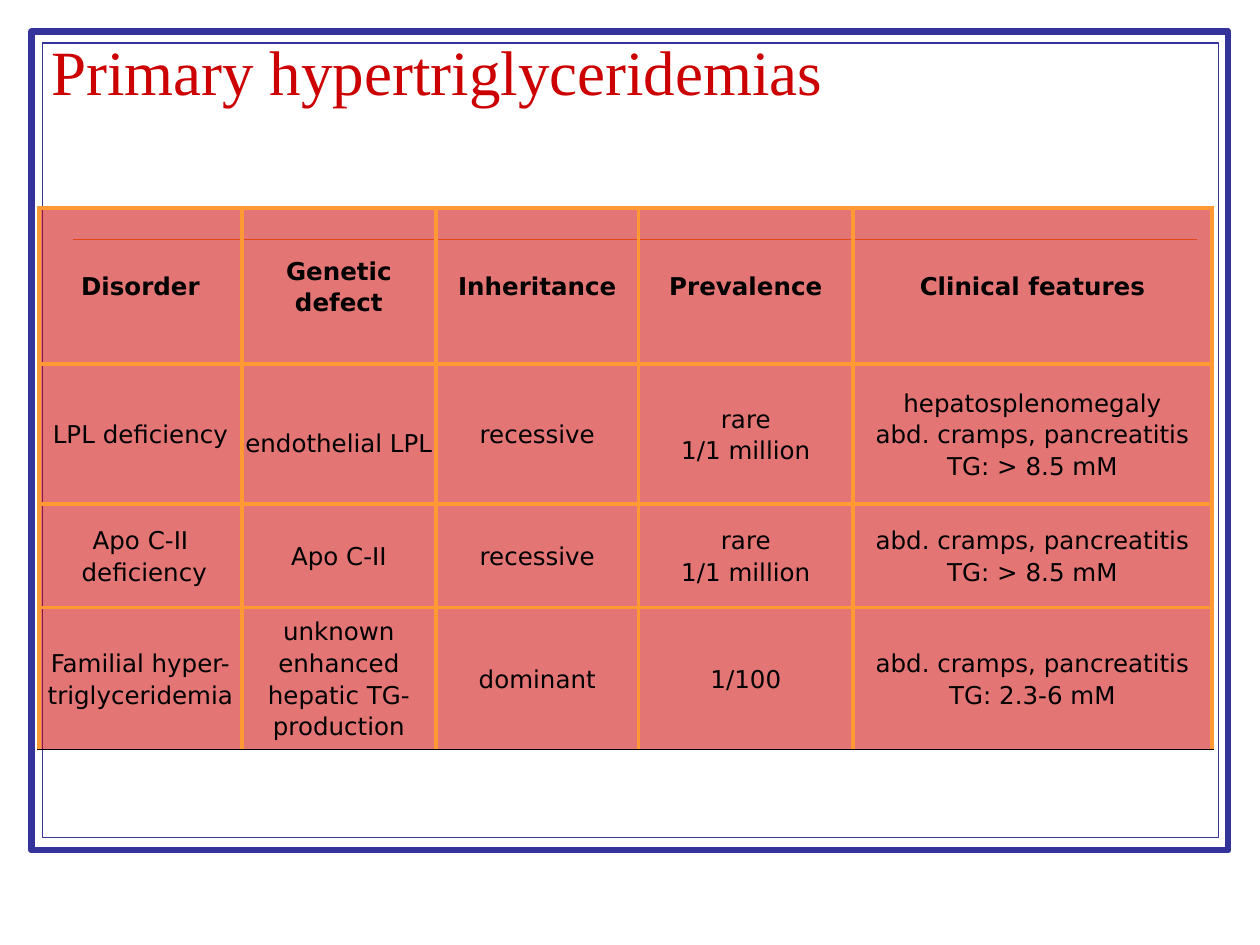
from copy import deepcopy

from lxml import etree
from pptx import Presentation
from pptx import util as u
from pptx.dml.color import RGBColor
from pptx.enum import shapes, text
from pptx.oxml.ns import qn

NAVY, ORANGE, RED, WHITE, BLACK = "333399", "FF9933", "CC0000", "FFFFFF", "000000"

COLUMN_WIDTHS = [1.61, 1.54, 1.61, 1.7, 2.85]
ROW_HEIGHTS = [1.24, 1.11, 0.82, 0.98]
DISORDERS = [
    ["Disorder", "Genetic defect", "Inheritance", "Prevalence", "Clinical features"],
    ["LPL deficiency", "endothelial LPL", "recessive", "rare\n1/1 million",
     "hepatosplenomegaly\nabd. cramps, pancreatitis\nTG: > 8.5 mM"],
    ["Apo C-II\n deficiency", "Apo C-II", "recessive", "rare\n1/1 million",
     "abd. cramps, pancreatitis\nTG: > 8.5 mM"],
    ["Familial hyper-triglyceridemia", "unknown\nenhanced hepatic TG-production",
     "dominant", "1/100", "abd. cramps, pancreatitis\nTG: 2.3-6 mM"],
]


def color(value):
    return RGBColor.from_string(value)


def apply(target, values):
    """Set each attribute of target named in values."""
    for name, value in values.items():
        setattr(target, name, value)


class SlideBuilder:
    title_font = {"name": "Times New Roman", "size": u.Pt(36)}
    cell_font = {"name": "DejaVu Sans", "size": u.Pt(14)}
    cell_format = {"margin_left": 0, "margin_right": 0,
                   "margin_top": u.Inches(0.05), "margin_bottom": u.Inches(0.05),
                   "vertical_anchor": text.MSO_ANCHOR.MIDDLE}

    def __init__(self, page):
        self.page = page

    def frame(self, left, top, width, height, weight):
        box = self.page.shapes.add_shape(
            shapes.MSO_SHAPE.RECTANGLE, *map(u.Inches, (left, top, width, height)))
        box.shadow.inherit = False
        box.fill.solid()
        box.fill.fore_color.rgb = color(WHITE)
        box.line.color.rgb = color(NAVY)
        box.line.width = u.Pt(weight)

    def rule(self, left, right, top):
        line = self.page.shapes.add_connector(
            shapes.MSO_CONNECTOR.STRAIGHT, *map(u.Inches, (left, top, right, top)))
        line.line.color.rgb = color(ORANGE)
        line.line.width = u.Pt(1)
        etree.SubElement(line._element.spPr, qn("a:effectLst"))

    def fill_para(self, para, words, font, ink, **layout):
        """Fill a paragraph, giving its line breaks the same font as its text."""
        para.text = words
        apply(para, layout)
        for span in para.runs:
            apply(span.font, font)
            span.font.color.rgb = color(ink)
        for line_break in para._p.findall(qn("a:br")):
            line_break.insert(0, deepcopy(para.runs[0]._r.rPr))

    def title(self, words, left, top, width, height):
        box = self.page.shapes.add_textbox(*map(u.Inches, (left, top, width, height)))
        apply(box.text_frame, {"word_wrap": True,
                               "vertical_anchor": text.MSO_ANCHOR.MIDDLE})
        self.fill_para(box.text_frame.paragraphs[0], words, self.title_font, RED,
                       line_spacing=0.9)

    def border(self, cell, side, ink, weight):
        edge = etree.SubElement(cell._tc.get_or_add_tcPr(), qn(f"a:ln{side}"),
                                w=str(u.Pt(weight)))
        fill = etree.SubElement(edge, qn("a:solidFill"))
        etree.SubElement(fill, qn("a:srgbClr"), val=ink)

    def tint(self, cell, ink, opacity):
        cell.fill.solid()
        cell.fill.fore_color.rgb = color(ink)
        fill = cell._tc.tcPr.find(qn("a:solidFill"))
        etree.SubElement(fill[0], qn("a:alpha"), val=str(opacity * 1000))

    def table(self, rows, left, top, widths, heights):
        table = self.page.shapes.add_table(
            len(rows), len(widths),
            *map(u.Inches, (left, top, sum(widths), sum(heights)))).table
        apply(table, {"first_row": False, "horz_banding": False})
        for column, width in zip(table.columns, widths):
            column.width = u.Inches(width)
        for row, height in zip(table.rows, heights):
            row.height = u.Inches(height)
        for r, row in enumerate(rows):
            for c, words in enumerate(row):
                cell = table.cell(r, c)
                apply(cell, self.cell_format)
                for side in "LRT":
                    self.border(cell, side, ORANGE, 2.25)
                is_last = r == len(rows) - 1
                self.border(cell, "B", *((BLACK, 1) if is_last else (ORANGE, 2.25)))
                self.tint(cell, RED, 54)
                self.fill_para(cell.text_frame.paragraphs[0], words,
                               {**self.cell_font, "bold": r == 0}, BLACK,
                               alignment=text.PP_ALIGN.CENTER, line_spacing=1.1)
        return table


def main():
    deck = Presentation()
    apply(deck, {"slide_width": u.Inches(10), "slide_height": u.Inches(7.5)})
    builder = SlideBuilder(deck.slides.add_slide(deck.slide_layouts[6]))
    builder.frame(0.25, 0.25, 9.5, 6.5, 3.5)
    builder.frame(0.34, 0.34, 9.33, 6.31, 0.75)
    builder.rule(0.58, 9.5, 1.9)
    builder.title("Primary hypertriglyceridemias", 0.31, 0.28, 9.31, 0.63)
    table = builder.table(DISORDERS, 0.31, 1.65, COLUMN_WIDTHS, ROW_HEIGHTS)
    # The endothelial LPL entry sits slightly below the middle of its row.
    table.cell(1, 1).margin_top = u.Inches(0.18)
    deck.save("out.pptx")


if __name__ == "__main__":
    main()
